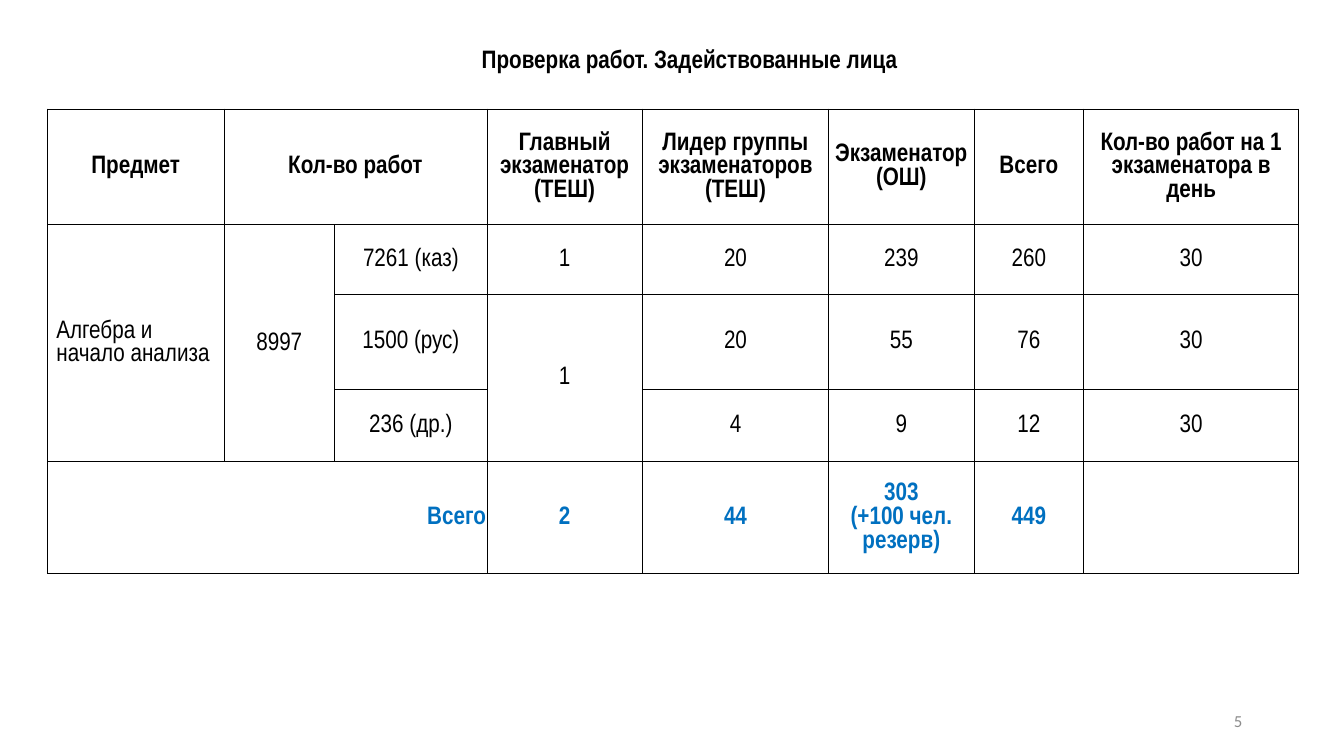
import pptx
import pptx.util
import pptx.dml.color
import pptx.enum.text
import pptx.oxml
import pptx.oxml.ns

Inches, Pt = pptx.util.Inches, pptx.util.Pt
ALIGN, MIDDLE = pptx.enum.text.PP_ALIGN, pptx.enum.text.MSO_ANCHOR.MIDDLE


def write(frame, text, align, color="000000", bold=False, size=18, font="Arial Narrow"):
    """Fill a text frame, one paragraph per line, in a single format."""
    frame.text = text
    for paragraph in frame.paragraphs:
        paragraph.alignment = align
        for run in paragraph.runs:
            run.font.size, run.font.name, run.font.bold = Pt(size), font, bold
            run.font.color.rgb = pptx.dml.color.RGBColor.from_string(color)


def set_border(cell, side, points):
    line = pptx.oxml.parse_xml(
        f'<a:{side} {pptx.oxml.ns.nsdecls("a")} w="{Pt(points)}">'
        f'<a:solidFill><a:srgbClr val="000000"/></a:solidFill></a:{side}>')
    cell._tc.get_or_add_tcPr().append(line)


presentation = pptx.Presentation()
presentation.slide_width, presentation.slide_height = Inches(13.33), Inches(7.5)
slide = presentation.slides.add_slide(presentation.slide_layouts[6])

page_number = slide.shapes.add_textbox(Inches(9.42), Inches(6.95), Inches(3), Inches(0.4)).text_frame
page_number.word_wrap = True
page_number.vertical_anchor = MIDDLE
write(page_number, "5", ALIGN.RIGHT, "8C8C8C", size=12, font="Calibri")

column_widths = [1.75, 1.1, 1.51, 1.54, 1.85, 1.44, 1.09, 2.13]
row_heights = [1.15, 0.69, 0.94, 0.72, 1.11]
rows = [
    ["Предмет", "Кол-во работ", "", "Главный экзаменатор\n(ТЕШ)", "Лидер группы экзаменаторов\n(ТЕШ)",
     "Экзаменатор\n(ОШ)", "Всего", "Кол-во работ на 1 экзаменатора в день"],
    ["Алгебра и начало анализа", "8997", "7261 (каз)", "1", "20", "239", "260", "30"],
    ["", "", "1500 (рус)", "1", "20", "55", "76", "30"],
    ["", "", "236 (др.)", "", "4", "9", "12", "30"],
    ["Всего", "", "", "2", "44", "303\n(+100 чел. резерв)", "449", ""],
]
staff_table = slide.shapes.add_table(
    len(rows), len(column_widths), Inches(0.47), Inches(1.08),
    Inches(sum(column_widths)), Inches(sum(row_heights))).table
staff_table.first_row = staff_table.horz_banding = False
for column, width in zip(staff_table.columns, column_widths):
    column.width = Inches(width)
for row, height in zip(staff_table.rows, row_heights):
    row.height = Inches(height)

total_row = len(rows) - 1
for r, values in enumerate(rows):
    for c, value in enumerate(values):
        cell = staff_table.cell(r, c)
        cell.vertical_anchor = MIDDLE
        cell.margin_left = cell.margin_right = cell.margin_top = Inches(0.01)
        cell.margin_bottom = 0
        in_subject = 0 < r < total_row
        thick_sides = {
            "lnL": in_subject and c == 2,
            "lnR": in_subject and c == 1,
            "lnT": r == 2 and c >= 2,
            "lnB": r == 1 and c >= 2,
        }
        for side, thick in thick_sides.items():
            set_border(cell, side, 1 if thick else 0.5)
        cell.fill.background()

        align = ALIGN.CENTER
        if c == 0 and r > 0:
            align = ALIGN.RIGHT if r == total_row else ALIGN.LEFT
        write(cell.text_frame, value, align,
              "0070C0" if r == total_row else "000000", not in_subject)
        if c == 0 and r > 0:
            properties = cell.text_frame.paragraphs[0]._p.get_or_add_pPr()
            properties.set("marL", str(Inches(0.08)))
            properties.set("indent", "0")

for first, last in [((0, 1), (0, 2)), ((1, 0), (3, 0)), ((1, 1), (3, 1)),
                    ((2, 3), (3, 3)), ((4, 0), (4, 2))]:
    staff_table.cell(*first).merge(staff_table.cell(*last))

title = slide.shapes.add_textbox(Inches(3.51), Inches(0.38), Inches(6.66), Inches(0.4)).text_frame
title.word_wrap = True
title.auto_size = pptx.enum.text.MSO_AUTO_SIZE.SHAPE_TO_FIT_TEXT
write(title, "Проверка работ. Задействованные лица", ALIGN.CENTER, bold=True)

presentation.save("out.pptx")
